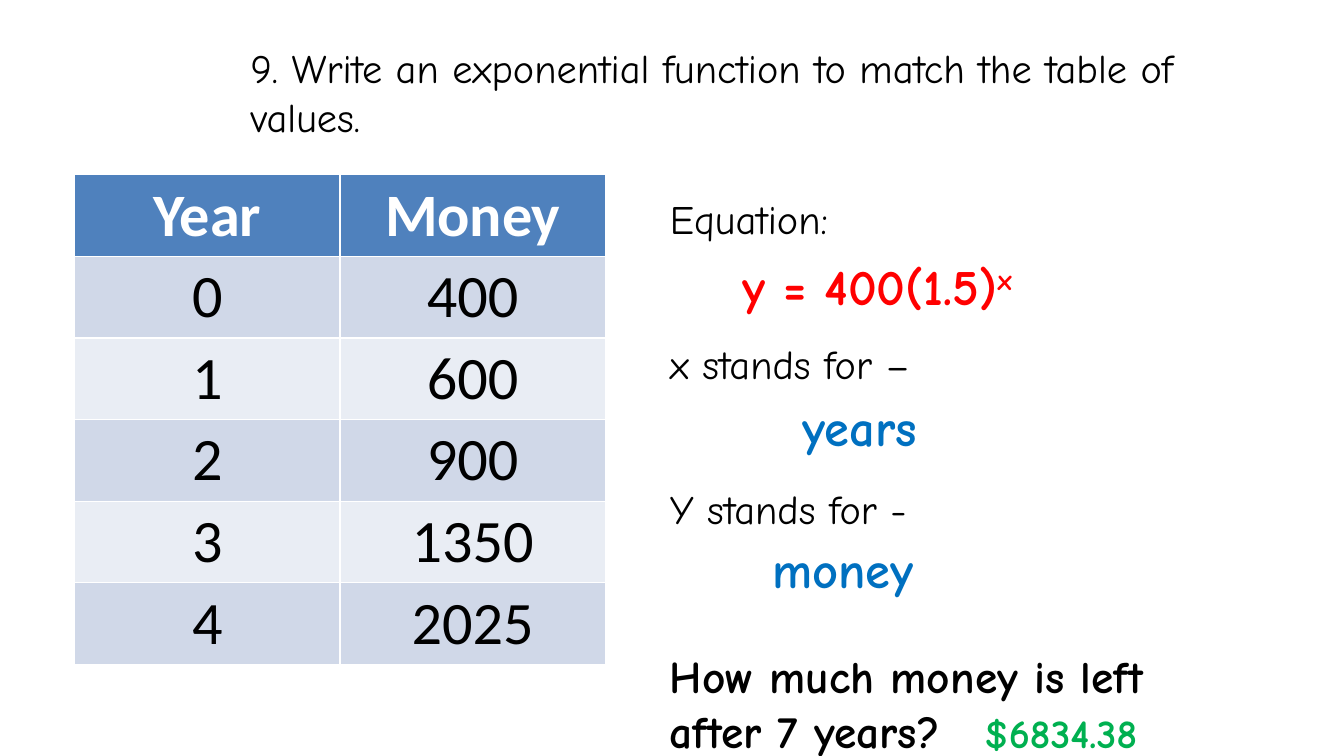
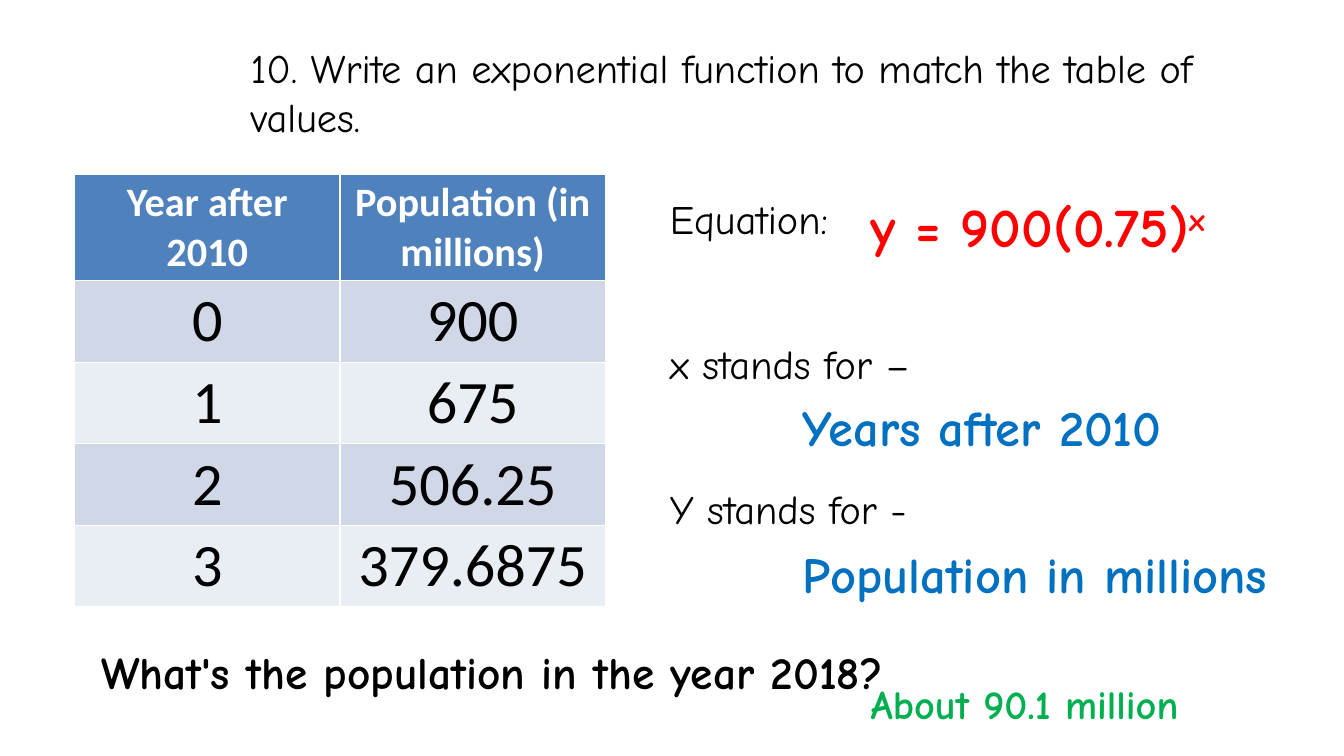
from dataclasses import dataclass

from pptx import Presentation
from pptx.dml.color import RGBColor
from pptx.enum.text import MSO_ANCHOR, PP_ALIGN
from pptx.util import Inches, Pt

WIDTH, HEIGHT = 13.33, 7.5
HAND_FONT, TABLE_FONT = "Comic Neue", "Calibri"
BLACK, WHITE = "000000", "FFFFFF"
RED, BLUE, GREEN = "FF0000", "0070C0", "00B050"
HEADER_FILL, BAND_FILLS = "4F81BD", ("D0D8E8", "E9EDF4")
PROMPTS = ["Equation:", "x stands for –", "Y stands for -"]


@dataclass
class Box:
    """A rectangle in inches."""
    left: float
    top: float
    width: float
    height: float

    def inner(self, left, top, width=None, height=None):
        """Inner box in percent of this one; by default it runs to the far edges."""
        width = 100 - left if width is None else width
        height = 100 - top if height is None else height
        return Box(self.left + self.width * left / 100,
                   self.top + self.height * top / 100,
                   self.width * width / 100, self.height * height / 100)

    def place(self):
        return [Inches(value) for value in
                (self.left, self.top, self.width, self.height)]


PAGE = Box(0, 0, WIDTH, HEIGHT)
TITLE_BOX = PAGE.inner(17.9, 5.1, 77.1, 14.3)
TABLE_BOX = PAGE.inner(5.55, 23.1, 39.5, 65)
PANEL_BOX = PAGE.inner(49.1, 24.8, 48.9, 56)


def color(hex_string):
    return RGBColor.from_string(hex_string)


def write(frame, *lines, size=28.8, font=HAND_FONT, fill=BLACK, bold=False,
          align=PP_ALIGN.LEFT, gap=0, superscript=""):
    """Write one paragraph per line, with an optional raised ending."""
    frame.word_wrap = True
    for index, line in enumerate(lines):
        paragraph = frame.add_paragraph() if index else frame.paragraphs[0]
        paragraph.alignment = align
        paragraph.space_before = Pt(gap if index else 0)
        for text in filter(None, (line, superscript)):
            run = paragraph.add_run()
            run.text = text
            run.font.size, run.font.name = Pt(size), font
            run.font.bold, run.font.color.rgb = bold, color(fill)
            if text == superscript:
                run._r.get_or_add_rPr().set("baseline", "30000")


def add_text(slide, box, *lines, **style):
    write(slide.shapes.add_textbox(*box.place()).text_frame, *lines, **style)


def add_values(slide, box, rows, header_size, header_height, row_height=0.81):
    """Table of values with a dark header and banded rows."""
    height = header_height + row_height * (len(rows) - 1)
    area = Box(box.left, box.top, box.width, height)
    table = slide.shapes.add_table(len(rows), len(rows[0]), *area.place()).table
    for row_index, values in enumerate(rows):
        header = row_index == 0
        table.rows[row_index].height = Inches(header_height if header else row_height)
        for column_index, value in enumerate(values):
            cell = table.cell(row_index, column_index)
            cell.margin_top = cell.margin_bottom = Inches(0.03)
            cell.vertical_anchor = MSO_ANCHOR.MIDDLE
            cell.fill.solid()
            cell.fill.fore_color.rgb = color(
                HEADER_FILL if header else BAND_FILLS[(row_index - 1) % 2])
            write(cell.text_frame, value, size=header_size if header else 43,
                  font=TABLE_FONT, fill=WHITE if header else BLACK,
                  bold=header, align=PP_ALIGN.CENTER)


def add_panel(slide, box, equation, equation_size, meanings):
    """Prompts with the equation and the meaning of each variable."""
    add_text(slide, box.inner(0, 0.5), *PROMPTS, gap=69)
    text, left, top = equation
    add_text(slide, box.inner(left, top, height=18), text, superscript="x",
             size=equation_size, fill=RED, bold=True)
    for text, left, top in meanings:
        add_text(slide, box.inner(left, top, height=17), text,
                 size=36, fill=BLUE, bold=True)


def add_question(slide, box, question, answer):
    """Closing question with its answer."""
    add_text(slide, box, question, size=32.4, bold=True)
    text, left, top = answer
    add_text(slide, box.inner(left, top), text, fill=GREEN, bold=True)


def add_problem(presentation, number, values, panel, question_box, question):
    slide = presentation.slides.add_slide(presentation.slide_layouts[6])
    add_text(slide, TITLE_BOX, f"{number}. Write an exponential function "
             "to match the table of values.")
    add_values(slide, TABLE_BOX, **values)
    add_panel(slide, PANEL_BOX, **panel)
    add_question(slide, question_box, **question)


def main():
    presentation = Presentation()
    presentation.slide_width = Inches(WIDTH)
    presentation.slide_height = Inches(HEIGHT)

    # Growth: text entries carry their left and top share of the region
    add_problem(
        presentation, 9,
        values=dict(rows=[("Year", "Money"), ("0", "400"), ("1", "600"),
                          ("2", "900"), ("3", "1350"), ("4", "2025")],
                    header_size=43, header_height=0.81),
        panel=dict(equation=("y = 400(1.5)", 11, 14.8), equation_size=36,
                   meanings=[("years", 20.2, 48.1), ("money", 15.6, 81.7)]),
        question_box=PAGE.inner(49.1, 85.1, 42.5),
        question=dict(question="How much money is left after 7 years?",
                      answer=("$6834.38", 55.1, 53)))

    # Decay
    add_problem(
        presentation, 10,
        values=dict(rows=[("Year after 2010", "Population (in millions)"),
                          ("0", "900"), ("1", "675"), ("2", "506.25"),
                          ("3", "379.6875")],
                    header_size=28.8, header_height=1.05),
        panel=dict(equation=("y = 900(0.75)", 30.5, 0), equation_size=39.6,
                   meanings=[("Years after 2010", 20.2, 48.1),
                             ("Population in millions", 20.2, 82.9)]),
        question_box=PAGE.inner(6.8, 84.5, 87, 12.8),
        question=dict(question="What's the population in the year 2018?",
                      answer=("About 90.1 million", 65.8, 36.5)))

    presentation.save("out.pptx")


if __name__ == "__main__":
    main()
